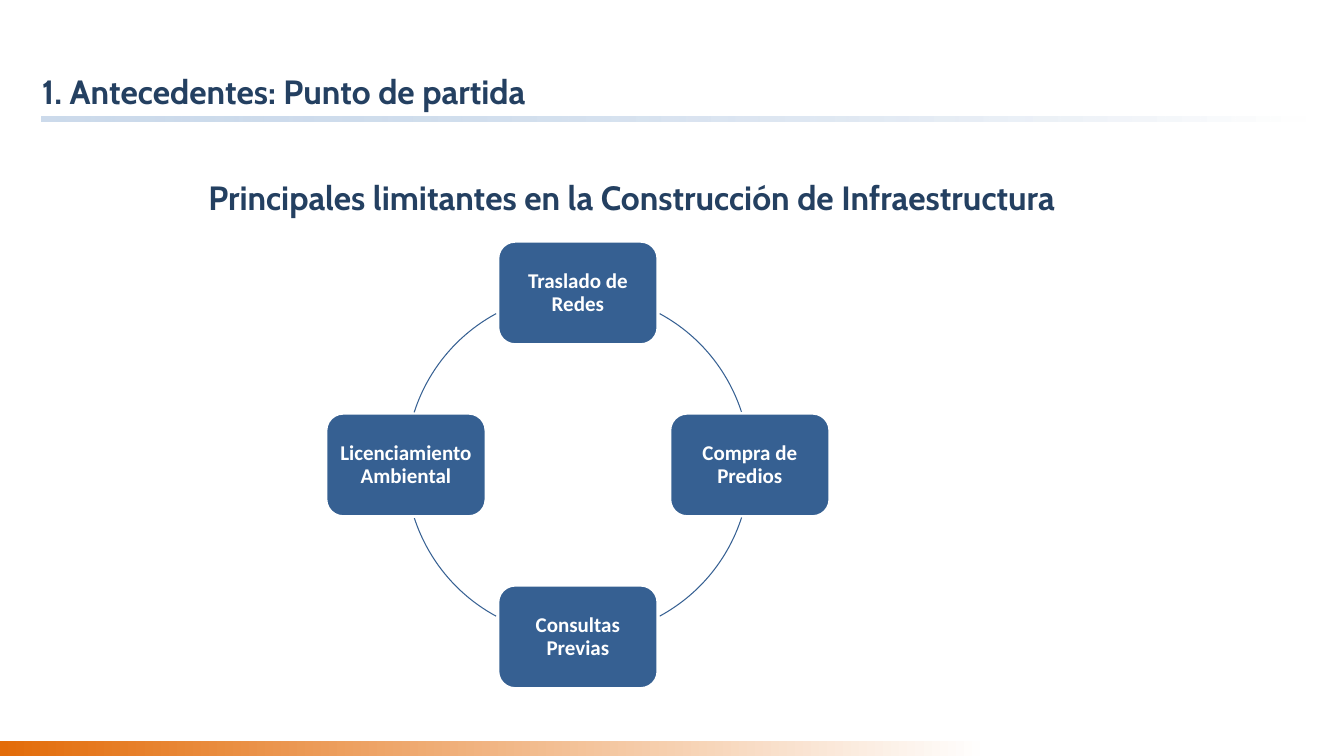
"""Build a slide with two headings and a ring of four infrastructure constraints."""
from dataclasses import dataclass
from math import cos, radians, sin

from lxml.etree import SubElement
from pptx import Presentation
from pptx.dml.color import RGBColor as Color
from pptx.enum.shapes import MSO_SHAPE as Preset
from pptx.enum.text import MSO_ANCHOR as Anchor, PP_ALIGN as Align
from pptx.oxml.ns import qn
from pptx.util import Inches, Pt


@dataclass(frozen=True)
class Theme:
    navy: str = "244061"
    blue: str = "366092"
    pale_blue: str = "9AB7D9"
    orange: str = "E36C09"
    white: str = "FFFFFF"
    heading_font: str = "Cabin"
    label_font: str = "Calibri"
    heading_size: float = 24
    label_size: float = 15
    node_line: float = 2
    arc_line: float = 0.75


@dataclass(frozen=True)
class Area:
    column: float
    row: float
    columns: float
    rows: float


@dataclass(frozen=True)
class Heading:
    text: str
    area: Area


@dataclass(frozen=True)
class Band:
    area: Area
    color: str
    opacity: int = 100


@dataclass(frozen=True)
class Ring:
    column: float
    row: float
    radius: float
    node_columns: float
    node_rows: float


THEME = Theme()
WIDTH, HEIGHT = Inches(13.33), Inches(7.5)
COLUMNS, ROWS = 160, 90
BANDS = (
    Band(Area(5, 13.9, 150.4, 0.6), THEME.pale_blue, 50),
    Band(Area(0, 88.2, 117.6, 1.8), THEME.orange),
)
HEADINGS = (
    Heading("Principales limitantes en la Construcción de Infraestructura",
            Area(24.8, 16.1, 112.8, 9.8)),
    Heading("1. Antecedentes: Punto de partida", Area(5, 3.5, 112.8, 9.8)),
)
RING = Ring(68.8, 55.35, 20.47, 19.05, 12.3)
LABELS = ("Traslado de Redes", "Compra de Predios",
          "Consultas Previas", "Licenciamiento Ambiental")
ARC_SPANS = ((298.4, 342.2), (17.8, 61.6), (118.4, 162.2), (197.8, 241.6))


def place(area: Area) -> tuple[int, int, int, int]:
    return (round(area.column * WIDTH / COLUMNS), round(area.row * HEIGHT / ROWS),
            round(area.columns * WIDTH / COLUMNS), round(area.rows * HEIGHT / ROWS))


def centred(column: float, row: float, columns: float, rows: float) -> Area:
    return Area(column - columns / 2, row - rows / 2, columns, rows)


def add_preset(page, preset, area: Area):
    shape = page.shapes.add_shape(preset, *place(area))
    shape.shadow.inherit = False
    return shape


def set_line(shape, color: str, width: float) -> None:
    shape.line.color.rgb = Color.from_string(color)
    shape.line.width = Pt(width)


def write(box, text: str, font: str, size: float, color: str, anchor, align, inset: float):
    frame = box.text_frame
    frame.word_wrap = True
    frame.vertical_anchor = anchor
    frame.margin_left = frame.margin_right = Inches(inset)
    frame.margin_top = frame.margin_bottom = Inches(inset)
    para = frame.paragraphs[0]
    para.alignment = align
    span = para.add_run()
    span.text = text
    span.font.name, span.font.size, span.font.bold = font, Pt(size), True
    span.font.color.rgb = Color.from_string(color)
    return para


def draw_band(page, band: Band) -> None:
    shape = add_preset(page, Preset.RECTANGLE, band.area)
    shape.line.fill.background()
    shape.fill.gradient()
    shape.fill.gradient_angle = 0
    for stop, color in zip(shape.fill.gradient_stops, (band.color, THEME.white)):
        stop.color.rgb = Color.from_string(color)
    if band.opacity < 100:
        first_color = next(shape.element.iter(qn("a:srgbClr")))
        SubElement(first_color, qn("a:alpha"), val=str(band.opacity * 1000))


def draw_heading(page, heading: Heading) -> None:
    box = page.shapes.add_textbox(*place(heading.area))
    write(box, heading.text, THEME.heading_font, THEME.heading_size, THEME.navy,
          Anchor.BOTTOM, Align.LEFT, 0)


def draw_node(page, ring: Ring, label: str, angle: float) -> None:
    column = ring.column + ring.radius * cos(radians(angle))
    row = ring.row + ring.radius * sin(radians(angle))
    node = add_preset(page, Preset.ROUNDED_RECTANGLE,
                      centred(column, row, ring.node_columns, ring.node_rows))
    node.fill.solid()
    node.fill.fore_color.rgb = Color.from_string(THEME.blue)
    set_line(node, THEME.white, THEME.node_line)
    para = write(node, label, THEME.label_font, THEME.label_size, THEME.white,
                 Anchor.MIDDLE, Align.CENTER, 0.06)
    para.line_spacing = 0.9


def draw_arc(page, ring: Ring, span: tuple[float, float]) -> None:
    diameter = 2 * ring.radius
    arc = add_preset(page, Preset.ARC, centred(ring.column, ring.row, diameter, diameter))
    arc.fill.background()
    set_line(arc, THEME.blue, THEME.arc_line)
    for index, degrees in enumerate(span):
        arc.adjustments[index] = degrees * 60000 / 100000


def main() -> None:
    deck = Presentation()
    deck.slide_width, deck.slide_height = WIDTH, HEIGHT
    page = deck.slides.add_slide(deck.slide_layouts[6])
    for band in BANDS:
        draw_band(page, band)
    for heading in HEADINGS:
        draw_heading(page, heading)
    for index, (label, span) in enumerate(zip(LABELS, ARC_SPANS)):
        draw_node(page, RING, label, index * 360 / len(LABELS) - 90)
        draw_arc(page, RING, span)
    deck.save("out.pptx")


if __name__ == "__main__":
    main()
